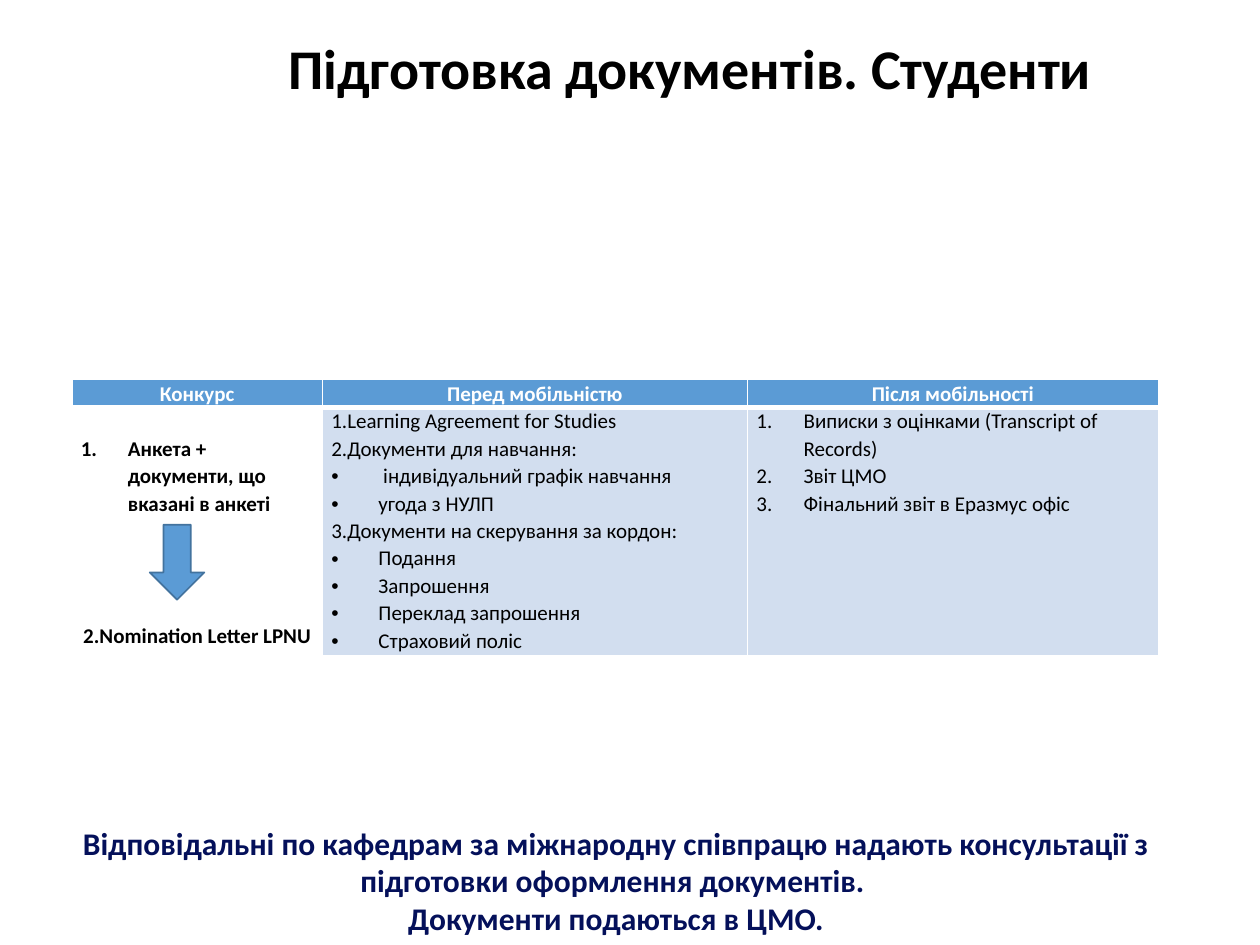
from lxml.etree import SubElement
from pptx import Presentation
from pptx.dml.color import RGBColor
from pptx.enum.shapes import MSO_SHAPE
from pptx.enum.text import MSO_ANCHOR, MSO_AUTO_SIZE, PP_ALIGN
from pptx.oxml import parse_xml
from pptx.oxml.ns import nsdecls, qn
from pptx.util import Cm, Pt

COLORS = {
    "black": "000000",
    "white": "FFFFFF",
    "navy": "04105A",
    "blue": "5B9BD5",
    "pale": "D2DEEF",
    "outline": "43739E",
}
FONT = "Calibri"
COLUMN_WIDTHS = [5.05, 8.57, 8.28]
ROW_HEIGHTS = [0.56, 5.0]
HEADINGS = ["Конкурс", "Перед мобільністю", "Після мобільності"]
CONTEST = [
    ("Анкета + документи, що вказані в анкеті", "number"),
    ("2.Nomination Letter LPNU", "plain"),
]
BEFORE = [
    ("1.Lеагпіпg Аgгееmепt fог Studies", "plain"),
    ("2.Документи для навчання:", "plain"),
    (" індивідуальний графік навчання", "bullet"),
    ("угода з НУЛП", "bullet"),
    ("3.Документи на скерування за кордон:", "plain"),
    ("Подання", "bullet"),
    ("Запрошення", "bullet"),
    ("Переклад запрошення", "bullet"),
    ("Страховий поліс", "bullet"),
]
AFTER = [
    ("Виписки з оцінками (Transcript of Records)", "number"),
    ("Звіт ЦМО", "number"),
    ("Фінальний звіт в Еразмус офіс", "number"),
]
ADVICE = [
    "Відповідальні по кафедрам за міжнародну співпрацю надають "
    "консультації з підготовки оформлення документів. ",
    "Документи подаються в ЦМО.",
]


def color(name):
    return RGBColor.from_string(COLORS[name])


def style(paragraph, size, ink, bold, align=PP_ALIGN.LEFT, spacing=1.0):
    paragraph.alignment = align
    paragraph.line_spacing = spacing
    for run in paragraph.runs:
        run.font.name = FONT
        run.font.size = Pt(size)
        run.font.bold = bold
        run.font.color.rgb = color(ink)


def add_text(slide, box, lines, size, ink, **layout):
    frame = slide.shapes.add_textbox(*map(Cm, box)).text_frame
    frame.word_wrap = True
    frame.text = "\n".join(lines)
    for paragraph in frame.paragraphs:
        style(paragraph, size, ink, True, **layout)
    return frame


def add_marker(paragraph, kind):
    properties = paragraph._p.get_or_add_pPr()
    properties.set("marL", str(Cm(0.95)))
    properties.set("indent", str(-Cm(0.95)))
    if kind == "number":
        SubElement(properties, qn("a:buFont"), typeface="+mj-lt")
        SubElement(properties, qn("a:buAutoNum"), type="arabicPeriod")
    else:
        SubElement(properties, qn("a:buFont"), typeface="Arial")
        SubElement(properties, qn("a:buChar"), char="•")


def set_borders(cell, **widths):
    properties = cell._tc.get_or_add_tcPr()
    for index, side in enumerate("LRTB"):
        width = Pt(widths.get(side, 1))
        properties.insert(index, parse_xml(
            f'<a:ln{side} {nsdecls("a")} w="{width}"><a:solidFill>'
            f'<a:srgbClr val="{COLORS["white"]}"/></a:solidFill></a:ln{side}>'))


def fill_cell(cell, items, fill, ink, bold, align=PP_ALIGN.LEFT):
    cell.margin_left = cell.margin_right = Cm(0.18)
    cell.margin_top = cell.margin_bottom = 0
    if fill:
        cell.fill.solid()
        cell.fill.fore_color.rgb = color(fill)
    else:
        cell.fill.background()
    cell.text_frame.text = "\n".join(text for text, kind in items)
    for paragraph, (text, kind) in zip(cell.text_frame.paragraphs, items):
        style(paragraph, 12, ink, bold, align, 1.07)
        if kind != "plain":
            add_marker(paragraph, kind)


def add_stages(slide):
    stages = slide.shapes.add_table(
        2, 3, Cm(1.45), Cm(7.65), Cm(sum(COLUMN_WIDTHS)), Cm(sum(ROW_HEIGHTS))).table
    stages.horz_banding = False
    for column, width in zip(stages.columns, COLUMN_WIDTHS):
        column.width = Cm(width)
    for row, height in zip(stages.rows, ROW_HEIGHTS):
        row.height = Cm(height)

    for index, (heading, items) in enumerate(zip(HEADINGS, [CONTEST, BEFORE, AFTER])):
        header, body = stages.cell(0, index), stages.cell(1, index)
        fill_cell(header, [(heading, "plain")], "blue", "white", True, PP_ALIGN.CENTER)
        set_borders(header, B=3)
        first = index == 0
        fill_cell(body, items, None if first else "pale", "black", first)
        set_borders(body, T=3)

    contest = stages.cell(1, 0)
    contest.margin_top = Cm(0.55)
    nomination = contest.text_frame.paragraphs[1]
    nomination.alignment = PP_ALIGN.CENTER
    nomination.space_before = Pt(60)


def add_down_arrow(slide):
    arrow = slide.shapes.add_shape(
        MSO_SHAPE.DOWN_ARROW, Cm(3.02), Cm(10.58), Cm(1.1), Cm(1.51))
    arrow.shadow.inherit = False
    arrow.fill.solid()
    arrow.fill.fore_color.rgb = color("blue")
    arrow.line.color.rgb = color("outline")
    arrow.line.width = Pt(1)


def main():
    presentation = Presentation()
    presentation.slide_width, presentation.slide_height = Cm(25.4), Cm(19.05)
    slide = presentation.slides.add_slide(presentation.slide_layouts[6])

    title = add_text(slide, (5.56, -0.4, 18.1, 3.68),
                     ["Підготовка документів. Студенти"], 32, "black", spacing=0.9)
    title.vertical_anchor = MSO_ANCHOR.MIDDLE
    add_stages(slide)
    advice = add_text(slide, (0.82, 16.48, 23.2, 2.57), ADVICE, 18, "navy",
                      align=PP_ALIGN.CENTER)
    advice.auto_size = MSO_AUTO_SIZE.SHAPE_TO_FIT_TEXT
    add_down_arrow(slide)

    presentation.save("out.pptx")


if __name__ == "__main__":
    main()
